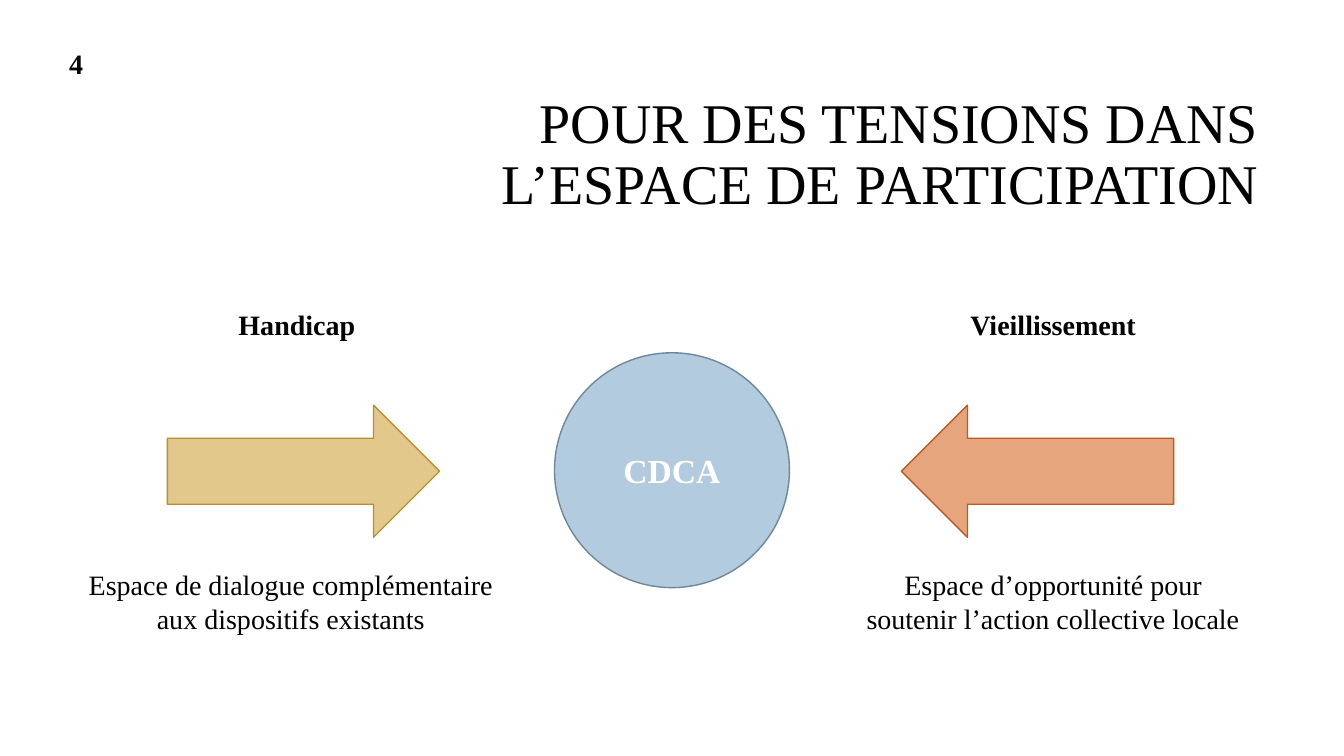
from lxml.etree import SubElement
from pptx import Presentation
from pptx.dml.color import RGBColor
from pptx.enum.shapes import MSO_SHAPE
from pptx.enum.text import MSO_ANCHOR, PP_ALIGN
from pptx.oxml.ns import qn
from pptx.util import Inches, Pt

FONT = "Times New Roman"


def color(hex_string):
    """Return the colour for a hex string."""
    return RGBColor.from_string(hex_string)


def write_text(shape, text, size=20, bold=False, ink="000000",
               align=PP_ALIGN.CENTER, anchor=MSO_ANCHOR.TOP, line_spacing=None):
    """Write one formatted paragraph into a shape."""
    frame = shape.text_frame
    frame.word_wrap = True
    frame.vertical_anchor = anchor
    paragraph = frame.paragraphs[0]
    paragraph.alignment = align
    paragraph.line_spacing = line_spacing
    run = paragraph.add_run()
    run.text = text
    run.font.name = FONT
    run.font.size = Pt(size)
    run.font.bold = bold
    run.font.color.rgb = color(ink)


def add_label(slide, text, left, top, width, height, **style):
    """Add a text box with a centred label."""
    box = slide.shapes.add_textbox(Inches(left), Inches(top), Inches(width), Inches(height))
    write_text(box, text, **style)


def add_figure(slide, kind, left, top, width, height, fill, line, opacity=100):
    """Add a filled and outlined preset shape."""
    shape = slide.shapes.add_shape(kind, Inches(left), Inches(top), Inches(width), Inches(height))
    shape.shadow.inherit = False
    shape.fill.solid()
    shape.fill.fore_color.rgb = color(fill)
    shape.line.color.rgb = color(line)
    shape.line.width = Pt(1)
    if opacity < 100:
        fill_color = shape.fill._xPr.find(qn("a:solidFill"))[0]
        SubElement(fill_color, qn("a:alpha")).set("val", str(opacity * 1000))
    return shape


def add_arrow(slide, left, fill, line, rotation=0):
    """Add a translucent block arrow on the middle row."""
    arrow = add_figure(slide, MSO_SHAPE.RIGHT_ARROW, left, 4.02, 2.7, 1.31, fill, line, opacity=70)
    arrow.rotation = rotation


def set_title(slide, text):
    """Place and format the slide title."""
    title = slide.shapes.title
    title.left, title.top = Inches(3.14), Inches(0.84)
    title.width, title.height = Inches(9.44), Inches(1.41)
    write_text(title, text, size=40, align=PP_ALIGN.RIGHT,
               anchor=MSO_ANCHOR.MIDDLE, line_spacing=0.9)


def main():
    """Build and save the slide."""
    presentation = Presentation()
    presentation.slide_width = Inches(13.33)
    presentation.slide_height = Inches(7.5)
    slide = presentation.slides.add_slide(presentation.slide_layouts[5])

    set_title(slide, "POUR DES TENSIONS DANS L’ESPACE DE PARTICIPATION")
    number = add_figure(slide, MSO_SHAPE.OVAL, 0.34, 0.2, 0.83, 0.86, "FFFFFF", "FFFFFF")
    write_text(number, "4", bold=True, anchor=MSO_ANCHOR.MIDDLE)

    council = add_figure(slide, MSO_SHAPE.OVAL, 5.5, 3.5, 2.33, 2.33, "94B6D2", "6D879B", opacity=70)
    write_text(council, "CDCA", size=24, bold=True, ink="FFFFFF", anchor=MSO_ANCHOR.MIDDLE)

    add_label(slide, "Handicap", 1.52, 3, 2.85, 0.44, bold=True)
    add_arrow(slide, 1.66, "D8B25C", "BA8F2D")
    add_label(slide, "Espace de dialogue complémentaire aux dispositifs existants",
              0.71, 5.58, 4.35, 0.77)

    add_label(slide, "Vieillissement", 9.02, 3, 2.85, 0.44, bold=True)
    add_arrow(slide, 8.94, "DD8047", "B95B22", rotation=180)
    add_label(slide, "Espace d’opportunité pour soutenir l’action collective locale",
              8.49, 5.58, 3.91, 0.77)

    presentation.save("out.pptx")


if __name__ == "__main__":
    main()
